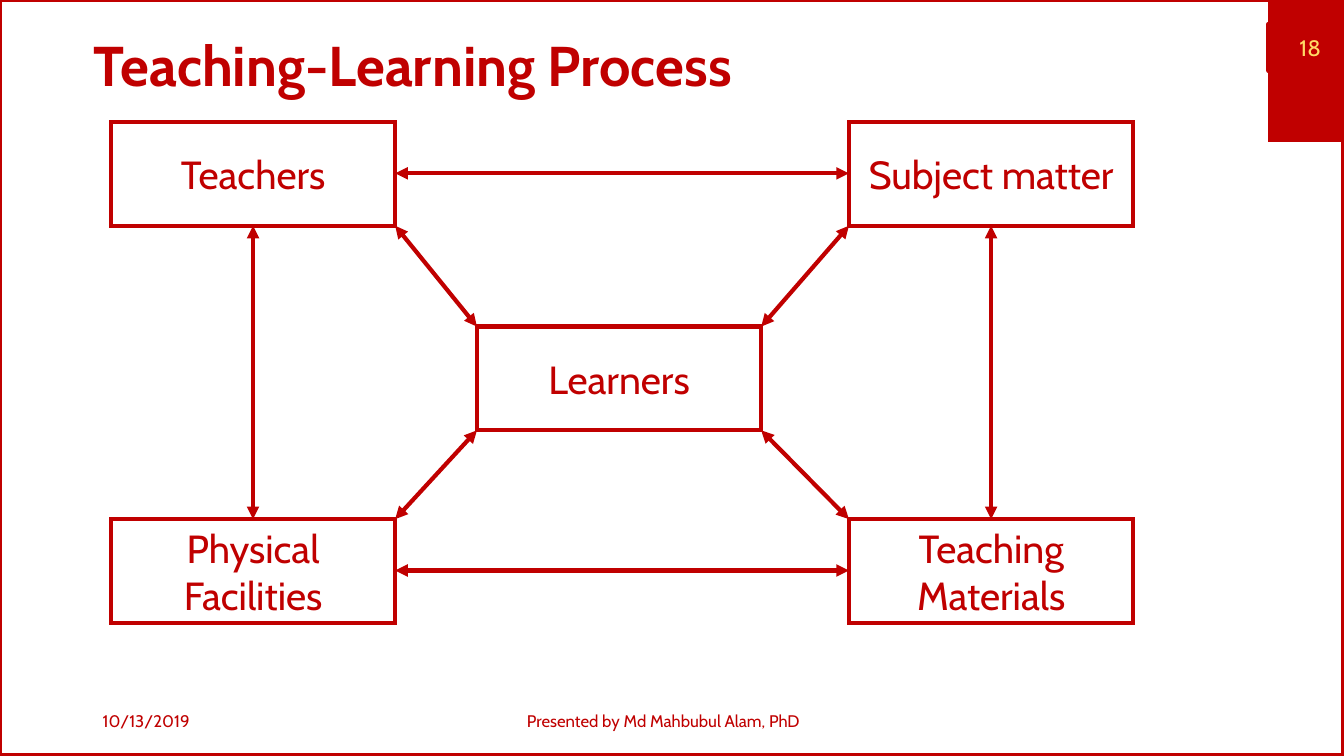
from dataclasses import dataclass

import pptx
import pptx.util
import pptx.dml.color
import pptx.enum.shapes
import pptx.enum.text
import pptx.oxml
import pptx.oxml.ns
import pptx.shapes.autoshape
import pptx.shapes.base
import pptx.slide
from lxml import etree

EMU_PER_PX = 9144  # 100 px to the inch
SLIDE_W, SLIDE_H = 1333, 750
NODE_W, NODE_H = 282, 103
FONT = "Cabin"
COLORS = {"red": "C00000", "gold": "FFD966", "white": "FFFFFF"}
ALIGN = pptx.enum.text.PP_ALIGN


@dataclass(frozen=True)
class Box:
    left: int
    top: int
    width: int
    height: int

    def at(self, fx: float, fy: float) -> tuple[int, int]:
        """Point at the given fractions of width and height."""
        return round(self.left + fx * self.width), round(self.top + fy * self.height)


@dataclass(frozen=True)
class Label:
    text: str
    size: int
    color: str = "red"
    align: ALIGN = ALIGN.CENTER
    bold: bool = False
    spacing: float = 1.0


@dataclass(frozen=True)
class Link:
    start: str
    start_at: tuple[float, float]
    end: str
    end_at: tuple[float, float]


def px(n: int) -> pptx.util.Emu:
    return pptx.util.Emu(n * EMU_PER_PX)


def rgb(name: str) -> pptx.dml.color.RGBColor:
    return pptx.dml.color.RGBColor.from_string(COLORS[name])


def add_ln_child(sp: pptx.shapes.base.BaseShape, tag: str, **attrs: str) -> None:
    ln = sp.line._get_or_add_ln()
    etree.SubElement(ln, pptx.oxml.ns.qn(tag), attrs)


def write(sp: pptx.shapes.base.BaseShape, label: Label) -> None:
    tf = sp.text_frame
    tf.word_wrap = True
    tf.vertical_anchor = pptx.enum.text.MSO_ANCHOR.MIDDLE
    p = tf.paragraphs[0]
    p.text = label.text
    p.alignment = label.align
    p.line_spacing = label.spacing
    p.font.name = FONT
    p.font.size = pptx.util.Pt(label.size)
    p.font.bold = label.bold
    p.font.color.rgb = rgb(label.color)


def add_text(slide: pptx.slide.Slide, box: Box, label: Label) -> None:
    sp = slide.shapes.add_textbox(px(box.left), px(box.top), px(box.width), px(box.height))
    write(sp, label)


def add_rect(slide: pptx.slide.Slide, box: Box, line_pt: float,
             fill: str | None = None, miter: bool = True) -> pptx.shapes.autoshape.Shape:
    sp = slide.shapes.add_shape(pptx.enum.shapes.MSO_SHAPE.RECTANGLE,
                                px(box.left), px(box.top), px(box.width), px(box.height))
    sp.shadow.inherit = False
    if fill:
        sp.fill.solid()
        sp.fill.fore_color.rgb = rgb(fill)
    else:
        sp.fill.background()
    sp.line.color.rgb = rgb("red")
    sp.line.width = pptx.util.Pt(line_pt)
    if miter:
        add_ln_child(sp, "a:miter", lim="800000")
    return sp


def add_link(slide: pptx.slide.Slide, link: Link) -> None:
    x1, y1 = NODES[link.start].at(*link.start_at)
    x2, y2 = NODES[link.end].at(*link.end_at)
    sp = slide.shapes.add_connector(pptx.enum.shapes.MSO_CONNECTOR.STRAIGHT,
                                    px(x1), px(y1), px(x2), px(y2))
    sp.line.color.rgb = rgb("red")
    sp.line.width = pptx.util.Pt(3)
    for end in ("a:headEnd", "a:tailEnd"):
        add_ln_child(sp, end, type="triangle")
    etree.SubElement(sp._element.spPr, pptx.oxml.ns.qn("a:effectLst"))


# Diagram: four corner boxes around the learners
LEFT, RIGHT, TOP, BOTTOM = 110, 842, 121, 515
NODES = {
    name: Box(left, top, NODE_W, NODE_H)
    for name, left, top in (
        ("Teachers", LEFT, TOP),
        ("Subject matter", RIGHT, TOP),
        ("Physical Facilities", LEFT, BOTTOM),
        ("Teaching Materials", RIGHT, BOTTOM),
        ("Learners", 473, 324),
    )
}
LINKS = (
    Link("Teachers", (1, 0.5), "Subject matter", (0, 0.5)),
    Link("Subject matter", (0.5, 1), "Teaching Materials", (0.5, 0)),
    Link("Teachers", (0.5, 1), "Physical Facilities", (0.5, 0)),
    Link("Physical Facilities", (1, 0.5), "Teaching Materials", (0, 0.5)),
    Link("Teachers", (1, 1), "Learners", (0, 0)),
    Link("Subject matter", (0, 1), "Learners", (1, 0)),
    Link("Physical Facilities", (1, 0), "Learners", (0, 1)),
    Link("Learners", (1, 1), "Teaching Materials", (0, 0)),
)

# Title and footer
TEXTS = (
    (Box(83, 26, 1150, 83),
     Label("Teaching-Learning Process", 40, align=ALIGN.LEFT, bold=True, spacing=0.9)),
    (Box(92, 695, 300, 40), Label("10/13/2019", 12, align=ALIGN.LEFT)),
    (Box(442, 695, 432, 40), Label("Presented by Md Mahbubul Alam, PhD", 12)),
)


def main() -> None:
    prs = pptx.Presentation()
    prs.slide_width, prs.slide_height = px(SLIDE_W), px(SLIDE_H)
    slide = prs.slides.add_slide(prs.slide_layouts[6])
    slide.background.fill.solid()
    slide.background.fill.fore_color.rgb = rgb("white")

    # Corner tab and slide frame
    add_rect(slide, Box(1258, 0, 76, 140), 1, fill="red")
    add_rect(slide, Box(0, 0, SLIDE_W, SLIDE_H), 3.5)

    for box, label in TEXTS:
        add_text(slide, box, label)

    # Slide number
    number = add_rect(slide, Box(1258, 24, 62, 46), 3, miter=False)
    write(number, Label("18", 16, color="gold", align=ALIGN.RIGHT))

    # Boxes and arrows
    for name, box in NODES.items():
        write(add_rect(slide, box, 3), Label(name, 28))
    for link in LINKS:
        add_link(slide, link)

    prs.save("out.pptx")


if __name__ == "__main__":
    main()
